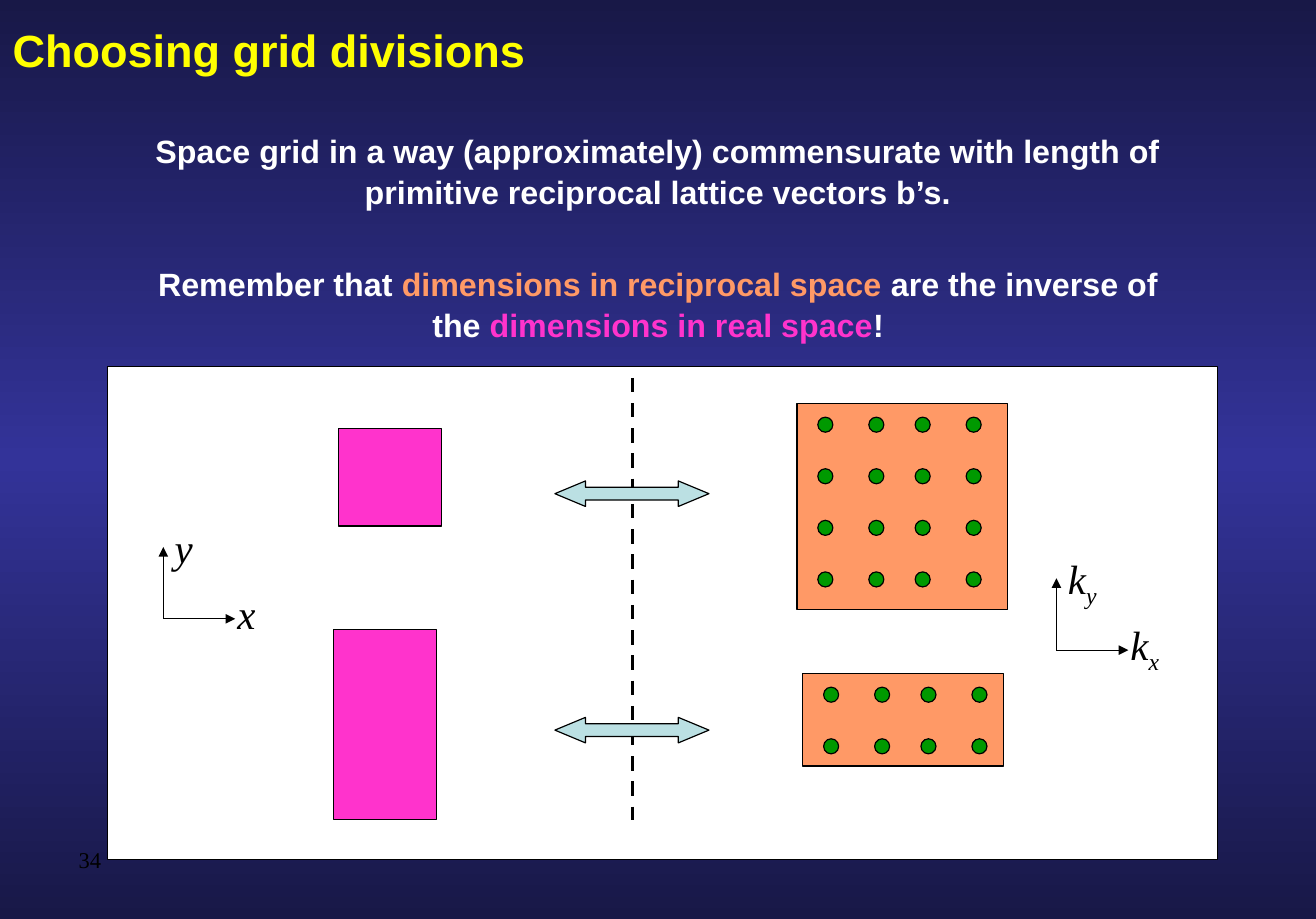
from copy import deepcopy
from dataclasses import dataclass

from lxml import etree
from pptx import Presentation
from pptx.dml.color import RGBColor
from pptx.enum import dml, shapes, text
from pptx.oxml import ns
from pptx.util import Inches, Pt


@dataclass(frozen=True)
class Theme:
    edge: str = "181847"
    middle: str = "333399"
    title: str = "FFFF00"
    white: str = "FFFFFF"
    black: str = "000000"
    reciprocal: str = "FF9966"
    real: str = "FF33CC"
    arrow: str = "BBE0E3"
    dot: str = "009900"
    sans: str = "Arial"
    serif: str = "Times New Roman"
    title_size: float = 28
    body_size: float = 20
    axis_size: float = 25.4
    number_size: float = 14
    thin: float = 0.75
    thick: float = 2.25


THEME = Theme()
KIND = shapes.MSO_SHAPE


def color(value):
    return RGBColor.from_string(value)


def add_span(para, words, size, font, tint, bold=False, italic=False):
    span = para.add_run()
    span.text = words
    span.font.size, span.font.name = Pt(size), font
    span.font.bold, span.font.italic = bold, italic
    span.font.color.rgb = color(tint)
    return span


def add_text_box(page, left, top, width, height, wrap=True):
    box = page.shapes.add_textbox(Inches(left), Inches(top), Inches(width), Inches(height))
    box.text_frame.word_wrap = wrap
    return box


def set_insets(frame):
    frame.margin_left = frame.margin_right = Inches(0.11)
    frame.margin_top = frame.margin_bottom = Inches(0.06)


def add_figure(page, kind, left, top, width, height, fill):
    figure = page.shapes.add_shape(kind, Inches(left), Inches(top), Inches(width), Inches(height))
    figure.shadow.inherit = False
    figure.fill.solid()
    figure.fill.fore_color.rgb = color(fill)
    figure.line.color.rgb = color(THEME.black)
    figure.line.width = Pt(THEME.thin)
    return figure


def add_line(page, x1, y1, x2, y2, width, dashed=False, arrow=False):
    line = page.shapes.add_connector(
        shapes.MSO_CONNECTOR.STRAIGHT, Inches(x1), Inches(y1), Inches(x2), Inches(y2))
    line.line.color.rgb = color(THEME.black)
    line.line.width = Pt(width)
    if dashed:
        line.line.dash_style = dml.MSO_LINE.DASH
    properties = line._element.spPr
    if arrow:
        etree.SubElement(properties.find(ns.qn("a:ln")), ns.qn("a:tailEnd"), type="triangle")
    etree.SubElement(properties, ns.qn("a:effectLst"))


def paint_background(page):
    fill = page.background.fill
    fill.gradient()
    fill.gradient_angle = 270
    for stop, position in zip(fill.gradient_stops, (0, 1)):
        stop.color.rgb = color(THEME.edge)
        stop.position = position
    stops = page._element.xpath(".//a:gsLst")[0]
    stops.insert(1, deepcopy(stops[0]))
    center = fill.gradient_stops[1]
    center.color.rgb = color(THEME.middle)
    center.position = 0.5


def place_title(page, left, top, width, height):
    title = page.shapes.title
    title.left, title.top = Inches(left), Inches(top)
    title.width, title.height = Inches(width), Inches(height)
    frame = title.text_frame
    set_insets(frame)
    frame.auto_size = text.MSO_AUTO_SIZE.NONE
    frame.vertical_anchor = text.MSO_ANCHOR.MIDDLE
    para = frame.paragraphs[0]
    para.alignment = text.PP_ALIGN.LEFT
    add_span(para, "Choosing grid divisions", THEME.title_size, THEME.sans, THEME.title, bold=True)


def add_advice(page, left, top, width, height):
    frame = add_text_box(page, left, top, width, height).text_frame
    set_insets(frame)
    advice = [
        [("Space grid in a way (approximately) commensurate with length of "
          "primitive reciprocal lattice vectors b’s.", THEME.white)],
        [("Remember that ", THEME.white),
         ("dimensions in reciprocal space", THEME.reciprocal),
         (" are the inverse of the ", THEME.white),
         ("dimensions in real space", THEME.real),
         ("!", THEME.white)],
    ]
    for index, spans in enumerate(advice):
        para = frame.add_paragraph() if index else frame.paragraphs[0]
        para.alignment = text.PP_ALIGN.CENTER
        para.line_spacing = 1.05
        para.space_before = Pt(32 * index)
        for words, tint in spans:
            add_span(para, words, THEME.body_size, THEME.sans, tint, bold=True)


def add_dot_grid(page, left, top, width, height, rows):
    """Reciprocal cell with its sampling points."""
    add_figure(page, KIND.RECTANGLE, left, top, width, height, THEME.reciprocal)
    for row in range(rows):
        for offset in (0, 0.44, 0.84, 1.28):
            add_figure(page, KIND.OVAL, left + 0.18 + offset, top + 0.12 + row * 0.445,
                       0.13, 0.13, THEME.dot)


def add_axes(page, left, bottom, letter, label_width, names):
    """Pair of axes; each name is a subscript when a letter is given."""
    length = 0.62
    add_line(page, left, bottom, left + length, bottom, THEME.thin, arrow=True)
    add_line(page, left, bottom, left, bottom - length, THEME.thin, arrow=True)
    for name, dx, dy in zip(names, (0.54, 0), (-0.31, -0.88)):
        box = add_text_box(page, left + dx, bottom + dy, label_width, 0.53, wrap=False)
        para = box.text_frame.paragraphs[0]
        style = (THEME.axis_size, THEME.serif, THEME.black, False, True)
        if letter:
            add_span(para, letter, *style)
        span = add_span(para, name, *style)
        if letter:
            span.font._element.set("baseline", "-25000")


def add_diagram(page, left, top, width, height):
    add_figure(page, KIND.RECTANGLE, left, top, width, height, THEME.white)
    # Divider and double arrows between the two spaces
    divider = left + 4.53
    add_line(page, divider, top + 0.1, divider, top + 3.92, THEME.thick, dashed=True)
    for dy in (0.99, 3.03):
        arrow = add_figure(page, KIND.LEFT_RIGHT_ARROW, divider - 0.67, top + dy,
                           1.33, 0.22, THEME.arrow)
        arrow.adjustments[0], arrow.adjustments[1] = 0.5, 1.2
    # Real space cells
    add_figure(page, KIND.RECTANGLE, left + 1.99, top + 0.54, 0.89, 0.84, THEME.real)
    add_figure(page, KIND.RECTANGLE, left + 1.95, top + 2.27, 0.89, 1.64, THEME.real)
    # Reciprocal space cells
    add_dot_grid(page, left + 5.95, top + 0.32, 1.82, 1.78, rows=4)
    add_dot_grid(page, left + 6, top + 2.65, 1.73, 0.8, rows=2)
    # Axes
    add_axes(page, left + 0.48, top + 2.18, "", 0.36, "xy")
    add_axes(page, left + 8.19, top + 2.45, "k", 0.46, "xy")


def add_page_number(page, left, top, width, height):
    frame = add_text_box(page, left, top, width, height, wrap=False).text_frame
    frame.vertical_anchor = text.MSO_ANCHOR.MIDDLE
    add_span(frame.paragraphs[0], "34", THEME.number_size, THEME.serif, THEME.black)


def main():
    deck = Presentation()
    deck.slide_width, deck.slide_height = Inches(11.36), Inches(7.93)
    page = deck.slides.add_slide(deck.slide_layouts.get_by_name("Title Only"))
    paint_background(page)
    place_title(page, 0, 0, 10.22, 0.86)
    add_advice(page, 1.17, 1.06, 9.02, 1.91)
    add_page_number(page, 0.58, 7.26, 0.4, 0.32)
    add_diagram(page, 0.93, 3.16, 9.58, 4.26)
    deck.save("out.pptx")


if __name__ == "__main__":
    main()
